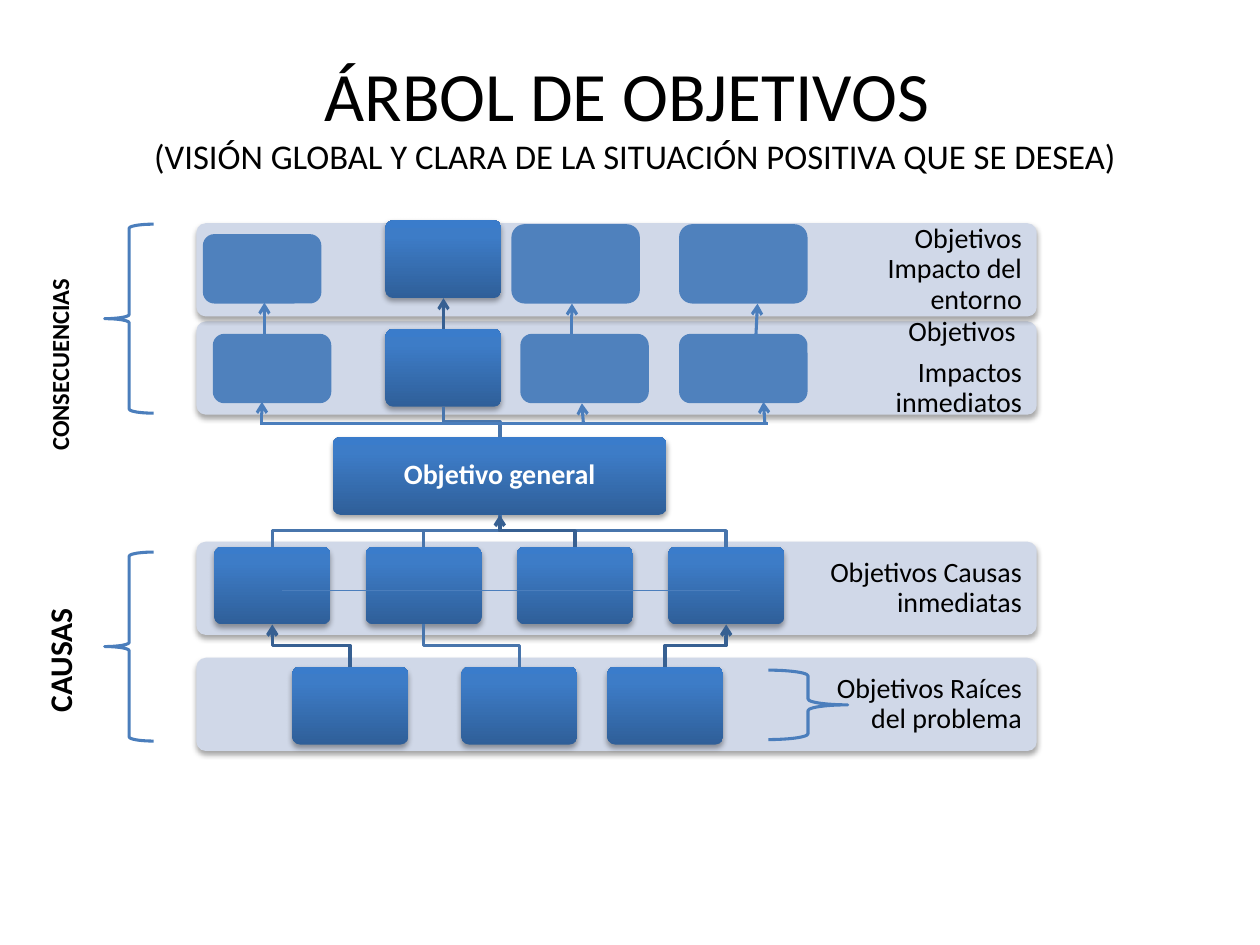
from lxml import etree
from pptx import Presentation
from pptx.dml.color import RGBColor
from pptx.enum.shapes import MSO_CONNECTOR as Link, MSO_SHAPE as Shape
from pptx.enum.text import MSO_ANCHOR as Anchor, MSO_AUTO_SIZE as AutoSize, PP_ALIGN as Align
from pptx.oxml import parse_xml
from pptx.oxml.ns import nsdecls, qn
from pptx.util import Cm, Pt

COLORS = {
    "band": "D0D8E8", "box": "4F81BD", "line": "4B7EBC",
    "elbow": "4875AC", "arrow": "376092", "black": "000000", "white": "FFFFFF",
    "dark": "2F5F99", "mid": "3D7CC7", "light": "3A7CCB",
}
RGB = {name: RGBColor.from_string(value) for name, value in COLORS.items()}
FONT = "Calibri"
GRADIENT = (
    f'<a:gradFill {nsdecls("a")} rotWithShape="1"><a:gsLst>'
    + "".join(
        f'<a:gs pos="{position}"><a:srgbClr val="{COLORS[name]}"/></a:gs>'
        for position, name in ((0, "dark"), (80000, "mid"), (100000, "light"))
    )
    + '</a:gsLst><a:lin ang="16200000" scaled="0"/></a:gradFill>'
)
SHADOW = (
    f'<a:outerShdw {nsdecls("a")} blurRad="40000" dist="23000" dir="5400000" rotWithShape="0">'
    f'<a:srgbClr val="{COLORS["black"]}"><a:alpha val="35000"/></a:srgbClr></a:outerShdw>'
)

deck = Presentation()
deck.slide_width, deck.slide_height = Cm(25.4), Cm(19.05)
page = deck.slides.add_slide(deck.slide_layouts[6])
shapes = page.shapes


def add_block(left, top, width, height, fill=None, raised=True):
    block = shapes.add_shape(Shape.ROUNDED_RECTANGLE, Cm(left), Cm(top), Cm(width), Cm(height))
    block.line.fill.background()
    block.shadow.inherit = False
    properties = block.element.spPr
    if fill:
        block.fill.solid()
        block.fill.fore_color.rgb = RGB[fill]
    else:
        properties.find(qn("a:prstGeom")).addnext(parse_xml(GRADIENT))
    if raised:
        block.adjustments[0] = 0.1
        properties.find(qn("a:effectLst")).append(parse_xml(SHADOW))
    return block


def style_link(link, color, width, arrow_end=None):
    link.line.color.rgb = RGB[color]
    link.line.width = Pt(width)
    properties = link.element.spPr
    if arrow_end:
        etree.SubElement(properties.find(qn("a:ln")), qn(f"a:{arrow_end}"), type="arrow")
    etree.SubElement(properties, qn("a:effectLst"))


bands = [
    (13.26, ["Objetivos Raíces del problema"]),
    (10.92, ["Objetivos Causas inmediatas"]),
    (6.48, ["Objetivos ", "Impactos inmediatos"]),
    (4.5, ["Objetivos\vImpacto del entorno"]),
]
for top, lines in bands:
    add_block(3.96, top, 16.94, 1.88, "band")
    box = shapes.add_textbox(Cm(15.82), Cm(top), Cm(5.08), Cm(1.88))
    frame = box.text_frame
    frame.word_wrap = True
    frame.vertical_anchor = Anchor.MIDDLE
    frame.margin_left = frame.margin_right = frame.margin_top = frame.margin_bottom = Cm(0.3)
    frame.text = "\n".join(lines)
    for para in frame.paragraphs:
        para.alignment = Align.RIGHT
        para.line_spacing = 0.9
        para.space_after = Pt(5.6)
        para.font.name, para.font.size = FONT, Pt(16)
        para.font.color.rgb = RGB["black"]

node_width, node_height = 2.34, 1.57
impact, effect = [add_block(7.77, top, node_width, node_height) for top in (4.44, 6.63)]
general = add_block(6.71, 8.81, 6.73, node_height)
causes = [add_block(4.32 + 3.05 * i, 11.02, node_width, node_height) for i in range(4)]
roots = [add_block(left, 13.44, node_width, node_height) for left in (5.89, 9.3, 12.24)]

general.text_frame.text = "Objetivo general"
general.text_frame.vertical_anchor = Anchor.MIDDLE
para = general.text_frame.paragraphs[0]
para.alignment = Align.CENTER
para.line_spacing = 0.9
para.font.name, para.font.size, para.font.bold = FONT, Pt(16), True
para.font.color.rgb = RGB["white"]

link = shapes.add_connector(Link.STRAIGHT, 0, 0, 0, 0)
link.begin_connect(impact, 2)
link.end_connect(effect, 0)
style_link(link, "arrow", 1.75, "headEnd")

elbows = [
    (effect, general, False),
    (general, causes[0], False),
    (general, causes[1], False),
    (general, causes[3], False),
    (general, causes[2], True),
    (causes[0], roots[0], True),
    (causes[1], roots[1], False),
    (causes[3], roots[2], True),
]
for upper, lower, arrow in elbows:
    start_x, end_x = [node.left + node.width // 2 for node in (upper, lower)]
    start_y, end_y = upper.top + upper.height, lower.top
    middle_y = (start_y + end_y) // 2
    builder = shapes.build_freeform(start_x, start_y)
    builder.add_line_segments([(start_x, middle_y), (end_x, middle_y), (end_x, end_y)], close=False)
    elbow = builder.convert_to_shape()
    elbow.fill.background()
    style_link(elbow, "arrow" if arrow else "elbow", 2, "headEnd" if arrow else None)

boxes = [
    (10.31, 4.52, 2.59, 1.6), (4.09, 4.72, 2.39, 1.4), (13.69, 4.52, 2.59, 1.6),
    (4.29, 6.73, 2.39, 1.4), (13.69, 6.73, 2.59, 1.4), (10.49, 6.73, 2.59, 1.4),
]
for place in boxes:
    add_block(*place, fill="box", raised=False)

straight_lines = [
    (5.69, 11.91, 14.91, 11.91, 0.75, None),
    (5.33, 6.73, 5.33, 6.1, 1.75, "tailEnd"),
    (15.24, 6.73, 15.27, 6.12, 1.75, "tailEnd"),
    (11.53, 6.73, 11.53, 6.12, 1.75, "tailEnd"),
    (5.31, 8.53, 15.49, 8.53, 1.75, None),
    (5.28, 8.56, 5.28, 8.1, 1.75, "tailEnd"),
    (15.42, 8.56, 15.39, 8.1, 1.75, "tailEnd"),
    (11.76, 8.53, 11.73, 8.13, 1.75, "tailEnd"),
]
for *ends, width, arrow_end in straight_lines:
    link = shapes.add_connector(Link.STRAIGHT, *[Cm(value) for value in ends])
    style_link(link, "line", width, arrow_end)

braces = [
    (Shape.RIGHT_BRACE, 15.49, 13.51, 1.6, 1.4),
    (Shape.LEFT_BRACE, 2.11, 4.52, 0.99, 3.81),
    (Shape.LEFT_BRACE, 2.11, 11.13, 0.99, 3.81),
]
for kind, *place in braces:
    brace = shapes.add_shape(kind, *[Cm(value) for value in place])
    brace.fill.background()
    style_link(brace, "line", 1.75)

title = shapes.add_textbox(Cm(1.27), Cm(0.91), Cm(23.06), Cm(2.79))
title.text_frame.word_wrap = True
title.text_frame.vertical_anchor = Anchor.MIDDLE
para = title.text_frame.paragraphs[0]
para.alignment = Align.CENTER
para.font.name = FONT
para.font.color.rgb = RGB["black"]
span = para.add_run()
span.text = "ÁRBOL DE OBJETIVOS "
span.font.size = Pt(39.6)
para.add_line_break()
span = para.add_run()
span.text = "(VISIÓN GLOBAL Y CLARA DE LA SITUACIÓN POSITIVA QUE SE DESEA)"
span.font.size = Pt(19.8)

side_labels = [
    ("CONSECUENCIAS", -1.4, 6.3, 5.21, 0.86, 14, Align.LEFT),
    ("CAUSAS", -0.41, 12.8, 3.23, 1.02, 18, Align.CENTER),
]
for text, left, top, width, height, size, alignment in side_labels:
    box = shapes.add_textbox(Cm(left), Cm(top), Cm(width), Cm(height))
    box.rotation = 270
    box.text_frame.word_wrap = True
    box.text_frame.auto_size = AutoSize.SHAPE_TO_FIT_TEXT
    box.text_frame.text = text
    para = box.text_frame.paragraphs[0]
    para.alignment = alignment
    para.font.name, para.font.size, para.font.bold = FONT, Pt(size), True
    para.font.color.rgb = RGB["black"]

deck.save("out.pptx")
